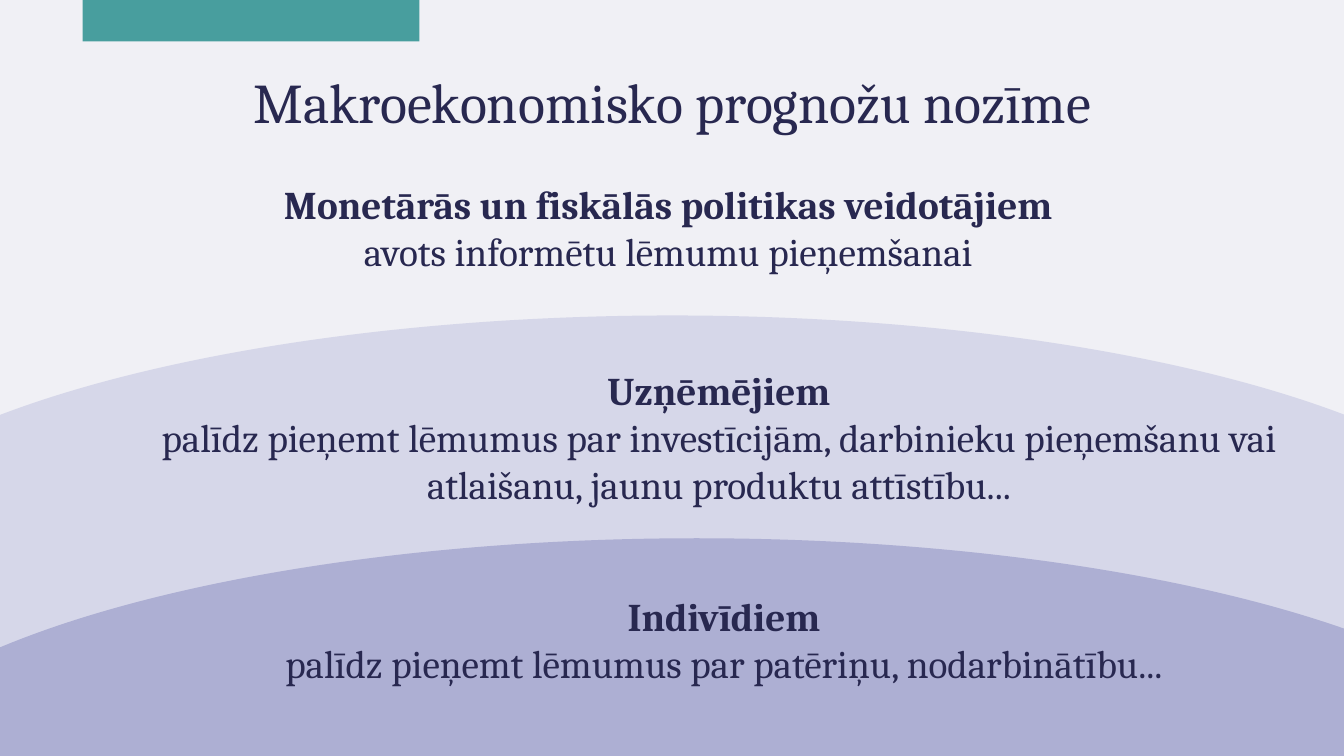
from dataclasses import dataclass

from pptx import Presentation
from pptx.dml.color import RGBColor
from pptx.enum.shapes import MSO_SHAPE
from pptx.enum.text import MSO_ANCHOR, MSO_AUTO_SIZE, PP_ALIGN
from pptx.slide import Slide
from pptx.text.text import TextFrame
from pptx.util import Inches, Pt

RECTANGLE = MSO_SHAPE.RECTANGLE
OVAL = MSO_SHAPE.OVAL
TOP = MSO_ANCHOR.TOP
CENTER = PP_ALIGN.CENTER
NO_AUTOFIT = MSO_AUTO_SIZE.NONE

FONT = "Cambria"
TITLE_SIZE = 40
BODY_SIZE = 28
TEXT_WIDTH, TEXT_HEIGHT = 11.5, 1.45
ARC_WIDTH, ARC_HEIGHT = 17.26, 5.4
COLORS = {
    "background": "F0F0F5",
    "accent": "489E9E",
    "text": "282850",
    "middle": "D6D7E9",
    "front": "ADAFD3",
}


@dataclass(frozen=True)
class Arc:
    left: float
    top: float
    color: str


@dataclass(frozen=True)
class Audience:
    left: float
    top: float
    heading: str
    benefit: str
    arc: Arc | None = None


AUDIENCES = [
    Audience(0.92, 1.74, "Monetārās un fiskālās politikas veidotājiem ",
             "avots informētu lēmumu pieņemšanai "),
    Audience(1.38, 3.58, "Uzņēmējiem",
             "palīdz pieņemt lēmumus par investīcijām, darbinieku pieņemšanu vai "
             "atlaišanu, jaunu produktu attīstību...",
             Arc(-1.96, 3.13, "middle")),
    Audience(1.43, 5.83, "Indivīdiem",
             "palīdz pieņemt lēmumus par patēriņu, nodarbinātību...",
             Arc(-1.72, 5.34, "front")),
]


def add_filled_shape(page: Slide, kind: MSO_SHAPE, left: float, top: float,
                     width: float, height: float, color: str) -> None:
    shape = page.shapes.add_shape(kind, Inches(left), Inches(top),
                                  Inches(width), Inches(height))
    shape.shadow.inherit = False
    shape.fill.solid()
    shape.fill.fore_color.rgb = RGBColor.from_string(COLORS[color])
    shape.line.fill.background()


def format_text(frame: TextFrame, size: int) -> None:
    frame.word_wrap = True
    frame.auto_size = NO_AUTOFIT
    frame.vertical_anchor = TOP
    for para in frame.paragraphs:
        para.alignment = CENTER
        for span in para.runs:
            span.font.name = FONT
            span.font.size = Pt(size)
            span.font.color.rgb = RGBColor.from_string(COLORS["text"])


def add_title(page: Slide, text: str) -> None:
    title = page.shapes.title
    title.left, title.top = Inches(0.92), Inches(0.62)
    title.width, title.height = Inches(TEXT_WIDTH), Inches(TEXT_HEIGHT)
    title.text_frame.text = text
    format_text(title.text_frame, TITLE_SIZE)


def add_audience(page: Slide, audience: Audience) -> None:
    if audience.arc:
        add_filled_shape(page, OVAL, audience.arc.left, audience.arc.top,
                         ARC_WIDTH, ARC_HEIGHT, audience.arc.color)
    box = page.shapes.add_textbox(Inches(audience.left), Inches(audience.top),
                                  Inches(TEXT_WIDTH), Inches(TEXT_HEIGHT))
    frame = box.text_frame
    frame.text = f"{audience.heading}\n{audience.benefit}"
    format_text(frame, BODY_SIZE)
    frame.paragraphs[0].runs[0].font.bold = True


def main() -> None:
    deck = Presentation()
    deck.slide_width, deck.slide_height = Inches(13.33), Inches(7.5)
    page = deck.slides.add_slide(deck.slide_layouts.get_by_name("Title Only"))
    page.background.fill.solid()
    page.background.fill.fore_color.rgb = RGBColor.from_string(COLORS["background"])
    add_filled_shape(page, RECTANGLE, 0.82, 0, 3.34, 0.41, "accent")
    add_title(page, "Makroekonomisko prognožu nozīme")
    for audience in AUDIENCES:
        add_audience(page, audience)
    deck.save("out.pptx")


if __name__ == "__main__":
    main()
